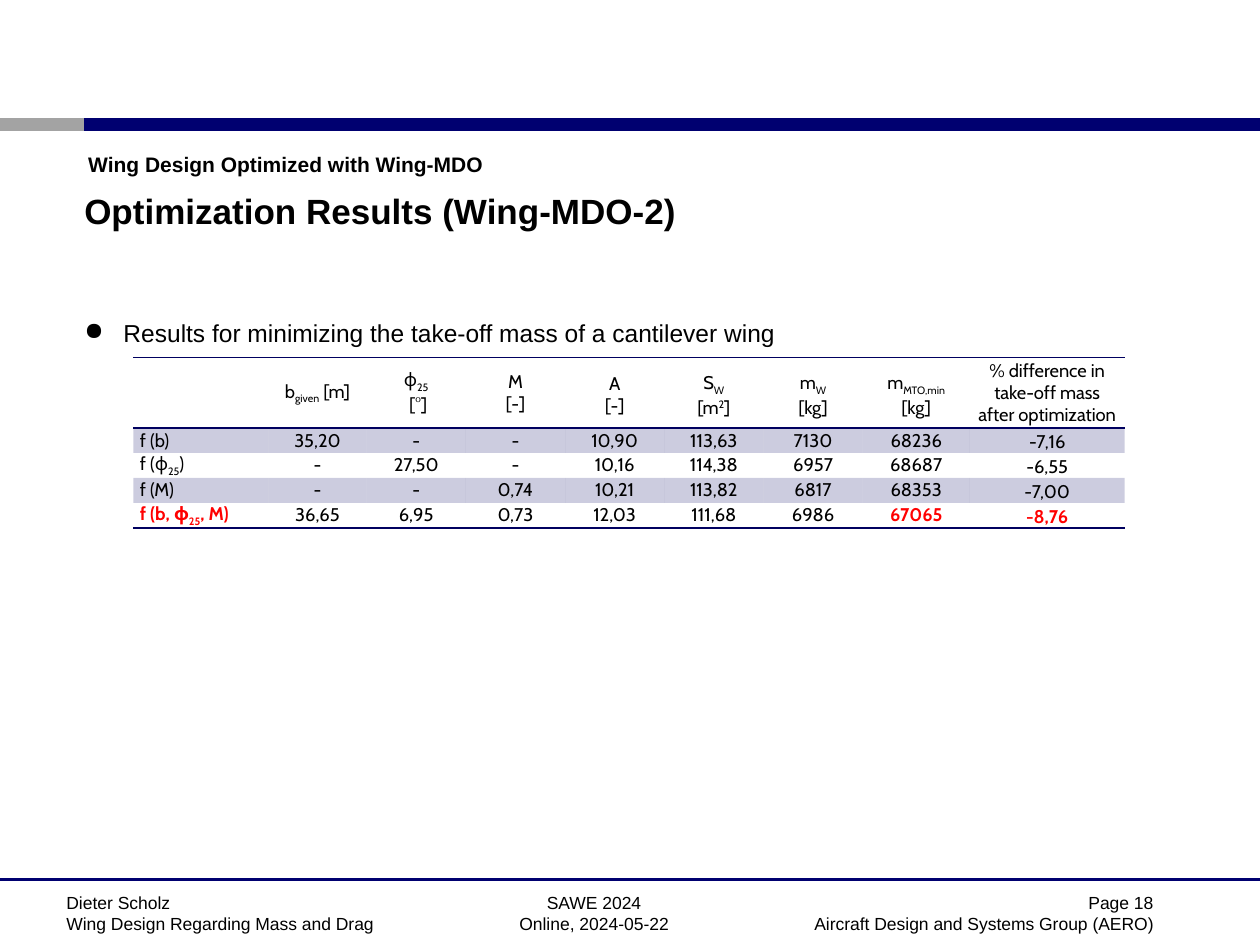
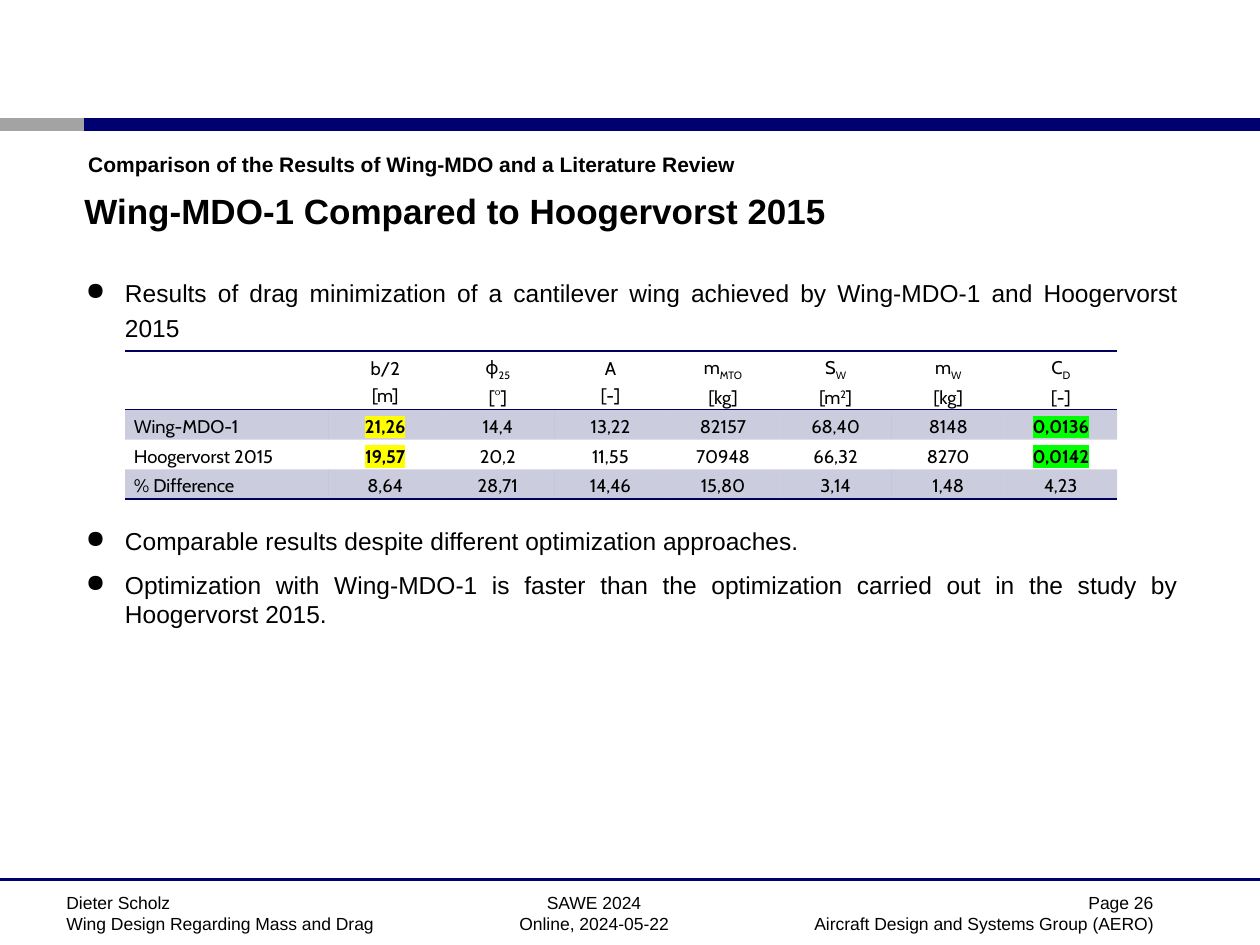
"""Builds two wing design slides, each with a results table."""
from lxml import etree
from pptx import Presentation
from pptx import util as u
from pptx.dml.color import RGBColor
from pptx.enum import shapes, text
from pptx.oxml import ns


class Theme:
    navy, gray, edge = "000070", "A3A3A3", "00005F"
    black, red, yellow, green = "000000", "FF0000", "FFFF00", "00FF00"
    sans, grid = "Arial", "Cabin"
    title, head, body, foot, cell = 20, 12, 14, 10, 10.5
    shade = 20000
    plain = "{2D5ABB26-0587-4C30-8999-92F81FD0307C}"


LEFT, MID, RIGHT, JUST = (text.PP_ALIGN.LEFT, text.PP_ALIGN.CENTER,
                          text.PP_ALIGN.RIGHT, text.PP_ALIGN.JUSTIFY)
TOP, CORE, LOW = (text.MSO_ANCHOR.TOP, text.MSO_ANCHOR.MIDDLE,
                  text.MSO_ANCHOR.BOTTOM)


def write(frame, words, size, align=LEFT, bold=False, font=Theme.sans,
          color=Theme.black, lead=None):
    """Fill a frame; ~x~ lowers x and ~^x~ raises it."""
    frame.word_wrap = True
    frame.text = words
    for para in frame.paragraphs:
        parts = para.text.split("~")
        para.text = parts[0]
        for part in parts[1:]:
            para.add_run().text = part
        para.alignment = align
        para.line_spacing = lead
        for spot, run in enumerate(para.runs):
            run.font.size = u.Pt(size)
            run.font.name = font
            run.font.bold = bold
            run.font.color.rgb = RGBColor.from_string(color)
            if spot % 2:
                rise = run.text.startswith("^")
                run.text = run.text.lstrip("^")
                run.font._element.set("baseline", "30000" if rise else "-25000")


def box(slide, place, words, size, align=LEFT, bold=False, anchor=TOP):
    """Add a text box at a place given in centimetres."""
    frame = slide.shapes.add_textbox(*map(u.Cm, place)).text_frame
    frame.vertical_anchor = anchor
    write(frame, words, size, align, bold)
    return frame


rules = [
    (0, 1.7, 17.73, Theme.navy, 1.5),
    (0, 1.7, 2.51, Theme.gray, 7.09),
    (1.7, 25.4, 2.51, Theme.navy, 7.09),
    (0, 25.4, 17.73, Theme.navy, 2),
]
feet = [
    (7.49, 8.97, MID, "SAWE 2024\nOnline, 2024-05-22"),
    (1.09, 10.21, LEFT, "Dieter Scholz\nWing Design Regarding Mass and Drag"),
    (15.7, 7.8, RIGHT, "Page {}\nAircraft Design and Systems Group (AERO)"),
]

pages = [
    dict(
        page=18,
        head="Wing Design Optimized with Wing-MDO",
        title="Optimization Results (Wing-MDO-2)",
        place=(1.45, 6.17, 22.78, 8.56),
        points=[("Results for minimizing the take-off mass of a cantilever wing",
                 1.2, 0)],
        grid=(2.69, 7.21), pad=0.13, lead=None, tall=range(4, 8), low=8,
        wide=[2.72, 1.98] + [2] * 5 + [2.16, 3.12],
        high=[1.42] + [0.5] * 4,
        rows=[
            ["", "b~given~ [m]", "ϕ~25~\n [°]", "M\n[-]", "A\n[-]",
             "S~W~\n[m~^2~]", "m~W~\n[kg]", "m~MTO,min~\n[kg]",
             "% difference in take-off mass after optimization"],
            ["f (b)", "35,20", "-", "-", "10,90", "113,63", "7130", "68236",
             "-7,16"],
            ["f (ϕ~25~)", "-", "27,50", "-", "10,16", "114,38", "6957",
             "68687", "-6,55"],
            ["f (M)", "-", "-", "0,74", "10,21", "113,82", "6817", "68353",
             "-7,00"],
            ["f (b, ϕ~25~, M)", "36,65", "6,95", "0,73", "12,03", "111,68",
             "6986", "67065", "-8,76"],
        ],
        reds=[(4, 0), (4, 7), (4, 8)], glows={},
    ),
    dict(
        page=26,
        head="Comparison of the Results of Wing-MDO and a Literature Review",
        title="Wing-MDO-1 Compared to Hoogervorst 2015",
        place=(1.48, 5.36, 22.53, 11.66),
        points=[
            ("Results of drag minimization of a cantilever wing achieved by "
             "Wing-MDO-1 and Hoogervorst 2015", 1.2, 0),
            ("Comparable results despite different optimization approaches.",
             None, 105),
            ("Optimization with Wing-MDO-1 is faster than the optimization "
             "carried out in the study by Hoogervorst 2015.", None, 8),
        ],
        grid=(2.52, 7.08), pad=0.18, lead=1.2, tall=(), low=None,
        wide=[4.11] + [2.27] * 7,
        high=[1.18] + [0.6] * 3,
        rows=[
            ["", "b/2\n[m]", "ϕ~25~\n[°]", "A\n[-]", "m~MTO~\n[kg]",
             "S~W~\n[m~^2~]", "m~W~\n[kg]", "C~D~\n[-]"],
            ["Wing-MDO-1", "21,26", "14,4", "13,22", "82157", "68,40", "8148",
             "0,0136"],
            ["Hoogervorst 2015", "19,57", "20,2", "11,55", "70948", "66,32",
             "8270", "0,0142"],
            ["% Difference", "8,64", "28,71", "14,46", "15,80", "3,14", "1,48",
             "4,23"],
        ],
        reds=[],
        glows={(1, 1): Theme.yellow, (2, 1): Theme.yellow,
               (1, 7): Theme.green, (2, 7): Theme.green},
    ),
]

deck = Presentation()
deck.slide_width, deck.slide_height = u.Cm(25.4), u.Cm(19.05)

for page in pages:
    slide = deck.slides.add_slide(deck.slide_layouts[6])

    for start, end, y, color, width in rules:
        line = slide.shapes.add_connector(
            shapes.MSO_CONNECTOR.STRAIGHT, *map(u.Cm, (start, y, end, y)))
        line.line.color.rgb = RGBColor.from_string(color)
        line.line.width = u.Pt(width)
        etree.SubElement(line._element.spPr, ns.qn("a:effectLst"))

    for left, width, align, words in feet:
        box(slide, (left, 17.86, width, 1.27), words.format(page["page"]),
            Theme.foot, align)

    box(slide, (1.45, 3.63, 22.86, 1.24), page["title"], Theme.title,
        bold=True, anchor=CORE)

    points = page["points"]
    frame = box(slide, page["place"], "\n".join(p[0] for p in points),
                Theme.body, JUST)
    for para, (_, lead, gap) in zip(frame.paragraphs, points):
        props = para._p.get_or_add_pPr()
        props.set("marL", str(u.Cm(0.79)))
        props.set("indent", str(-u.Cm(0.79)))
        etree.SubElement(props, ns.qn("a:buChar"), char="●")
        para.line_spacing = lead
        if gap:
            para.space_before = u.Pt(gap)

    rows, wide, high = page["rows"], page["wide"], page["high"]
    last = len(rows) - 1
    place = (*page["grid"], sum(wide), sum(high))
    table = slide.shapes.add_table(
        len(rows), len(wide), *map(u.Cm, place)).table
    table.first_row = table.horz_banding = False
    table._tbl.tblPr[0].text = Theme.plain
    for col, width in zip(table.columns, wide):
        col.width = u.Cm(width)
    for row, height in zip(table.rows, high):
        row.height = u.Cm(height)

    for r, row in enumerate(rows):
        for c, words in enumerate(row):
            cell = table.cell(r, c)
            cell.margin_left = cell.margin_right = u.Cm(page["pad"])
            cell.margin_top = cell.margin_bottom = 0
            cell.vertical_anchor = LOW if r and c == page["low"] else CORE
            red, glow = (r, c) in page["reds"], page["glows"].get((r, c))
            write(cell.text_frame, words, Theme.cell, MID if c else LEFT,
                  red or bool(glow), Theme.grid,
                  Theme.red if red else Theme.black, page["lead"])
            if r == 0 and c in page["tall"]:
                cell.text_frame.paragraphs[0].line_spacing = 1.2
            if glow:
                props = cell.text_frame.paragraphs[0].runs[0].font._element
                mark = etree.Element(ns.qn("a:highlight"))
                etree.SubElement(mark, ns.qn("a:srgbClr"), val=glow)
                props.find(ns.qn("a:latin")).addprevious(mark)

            props = cell._tc.get_or_add_tcPr()
            if r % 2:
                cell.fill.solid()
                cell.fill.fore_color.rgb = RGBColor.from_string(Theme.edge)
                tint = props.find(".//" + ns.qn("a:srgbClr"))
                etree.SubElement(tint, ns.qn("a:alpha"), val=str(Theme.shade))
            else:
                cell.fill.background()
            sides = {0: ("a:lnT", "a:lnB"), last: ("a:lnB",)}.get(r, ())
            for spot, side in enumerate(sides):
                edge = etree.Element(ns.qn(side), w=str(u.Pt(1)))
                ink = etree.SubElement(edge, ns.qn("a:solidFill"))
                etree.SubElement(ink, ns.qn("a:srgbClr"), val=Theme.edge)
                props.insert(spot, edge)

    frame = box(slide, (1.55, 2.95, 22.45, 0.74), page["head"], Theme.head,
                bold=True)
    frame.margin_left = frame.margin_right = u.Cm(0.23)
    frame.margin_top = frame.margin_bottom = u.Cm(0.1)

deck.save("out.pptx")
